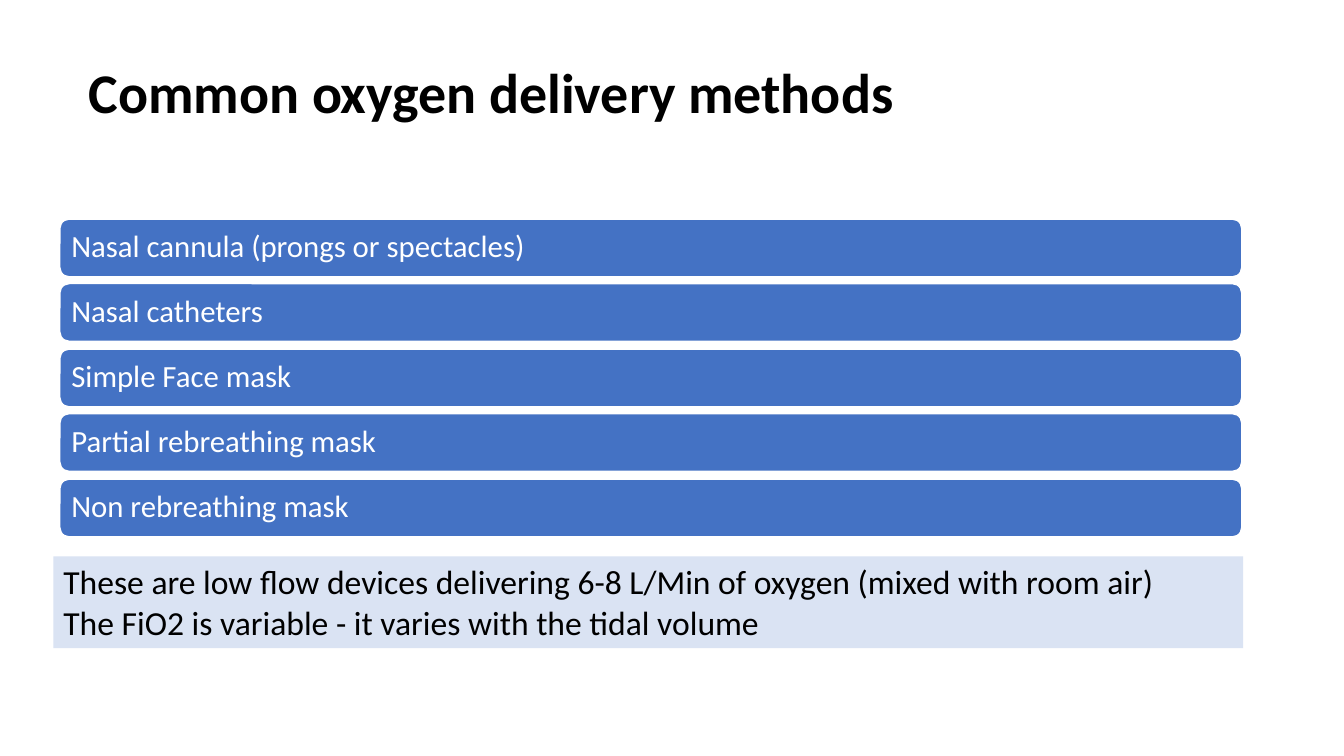
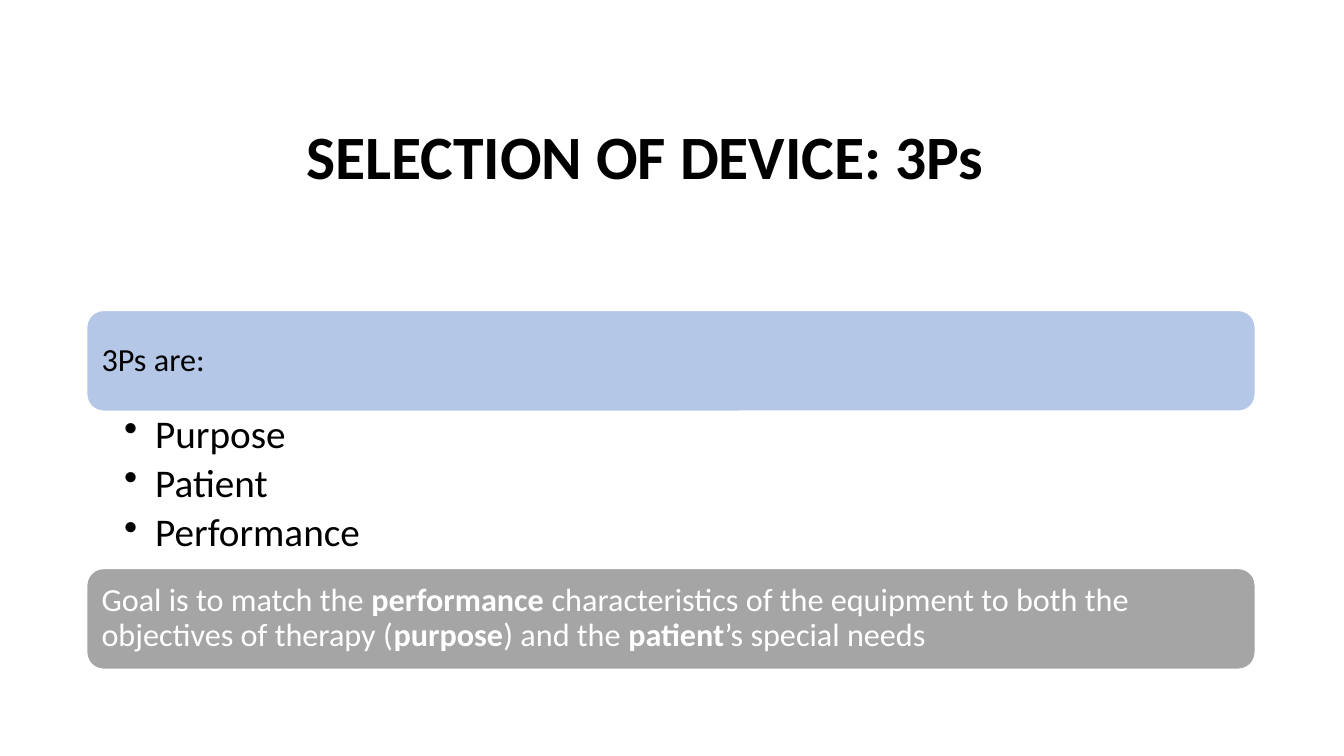
"""Build two slides on oxygen delivery methods and the selection of a device."""
import pptx
import pptx.dml.color
import pptx.enum.shapes
import pptx.enum.text
import pptx.oxml
import pptx.util
import lxml.etree

PX = 9144
FONT = "Calibri"
BLACK, WHITE = "000000", "FFFFFF"
BLUE, PALE_BLUE, LIGHT_BLUE, GREY = "4472C4", "DAE3F3", "B4C7E7", "A5A5A5"
ROUNDED = pptx.enum.shapes.MSO_SHAPE.ROUNDED_RECTANGLE
RECTANGLE = pptx.enum.shapes.MSO_SHAPE.RECTANGLE
MIDDLE = pptx.enum.text.MSO_ANCHOR.MIDDLE
TOP = pptx.enum.text.MSO_ANCHOR.TOP
LEFT = pptx.enum.text.PP_ALIGN.LEFT
CENTER = pptx.enum.text.PP_ALIGN.CENTER


def rgb(value):
    """Turn a hex string into a colour."""
    return pptx.dml.color.RGBColor.from_string(value)


def add_box(slide, bounds, lines, size, color=BLACK, kind=None, fill=None, outline=0,
            margins=(10, 5, 10, 5), anchor=MIDDLE, align=LEFT, spacing=0.9):
    """Add a text box or filled shape; text between double asterisks is bold."""
    bounds = [length * PX for length in bounds]
    if kind is None:
        shape = slide.shapes.add_textbox(*bounds)
    else:
        shape = slide.shapes.add_shape(kind, *bounds)
        shape.shadow.inherit = False
        shape.fill.solid()
        shape.fill.fore_color.rgb = rgb(fill)
        if outline:
            shape.line.color.rgb = rgb(WHITE)
            shape.line.width = pptx.util.Pt(outline)
        else:
            shape.line.fill.background()
    frame = shape.text_frame
    frame.word_wrap = True
    frame.vertical_anchor = anchor
    frame.margin_left, frame.margin_top, frame.margin_right, frame.margin_bottom = [
        margin * PX for margin in margins]
    frame.text = "\n".join(lines)
    for paragraph, line in zip(frame.paragraphs, lines):
        paragraph.clear()
        paragraph.alignment = align
        paragraph.line_spacing = spacing
        for index, piece in enumerate(line.split("**")):
            if piece:
                run = paragraph.add_run()
                run.text = piece
                run.font.name = FONT
                run.font.size = pptx.util.Pt(size)
                run.font.bold = index % 2 == 1
                run.font.color.rgb = rgb(color)
    return shape


presentation = pptx.Presentation()
presentation.slide_width = 1333 * PX
presentation.slide_height = 750 * PX
blank_layout = presentation.slide_layouts[6]

slide = presentation.slides.add_slide(blank_layout)
add_box(slide, (78, 38, 1082, 113), ["**Common oxygen delivery methods**"], 40)
methods = ["Nasal cannula (prongs or spectacles)", "Nasal catheters", "Simple Face mask",
           "Partial rebreathing mask", "Non rebreathing mask"]
for row, method in enumerate(methods):
    add_box(slide, (59, 217 + row * 129 // 2, 1173, 58), [method], 22, WHITE,
            ROUNDED, BLUE, 1.5, margins=(9, 9, 9, 9))
flow_notes = ["These are low flow devices delivering 6-8 L/Min of oxygen (mixed with room air)",
              "The FiO2 is variable - it varies with the tidal volume"]
add_box(slide, (53, 552, 1180, 91), flow_notes, 24, BLACK, RECTANGLE, PALE_BLUE,
        anchor=TOP, spacing=1.0)

slide = presentation.slides.add_slide(blank_layout)
add_box(slide, (281, 80, 718, 156), ["**SELECTION OF DEVICE: 3Ps**"], 44, align=CENTER)
goal = ("Goal is to match the **performance **characteristics of the equipment to both the "
        "objectives of therapy (**purpose**) and the **patient**’s special needs")
panels = [(308, "3Ps are:", BLACK, LIGHT_BLUE), (564, goal, WHITE, GREY)]
for top, text, color, fill in panels:
    add_box(slide, (86, top, 1159, 100), [text], 23, color, ROUNDED, fill, 1,
            margins=(10, 10, 10, 10))
bullets = add_box(slide, (86, 407, 1159, 156), ["Purpose", "Patient", "Performance"], 28,
                  margins=(37, 4, 22, 4), anchor=TOP)
for paragraph in bullets.text_frame.paragraphs:
    paragraph.space_after = pptx.util.Pt(5)
    properties = paragraph._p.get_or_add_pPr()
    properties.set("marL", str(31 * PX))
    properties.set("indent", str(-31 * PX))
    bullet = lxml.etree.SubElement(properties, pptx.oxml.ns.qn("a:buChar"))
    bullet.set("char", "•")

presentation.save("out.pptx")
